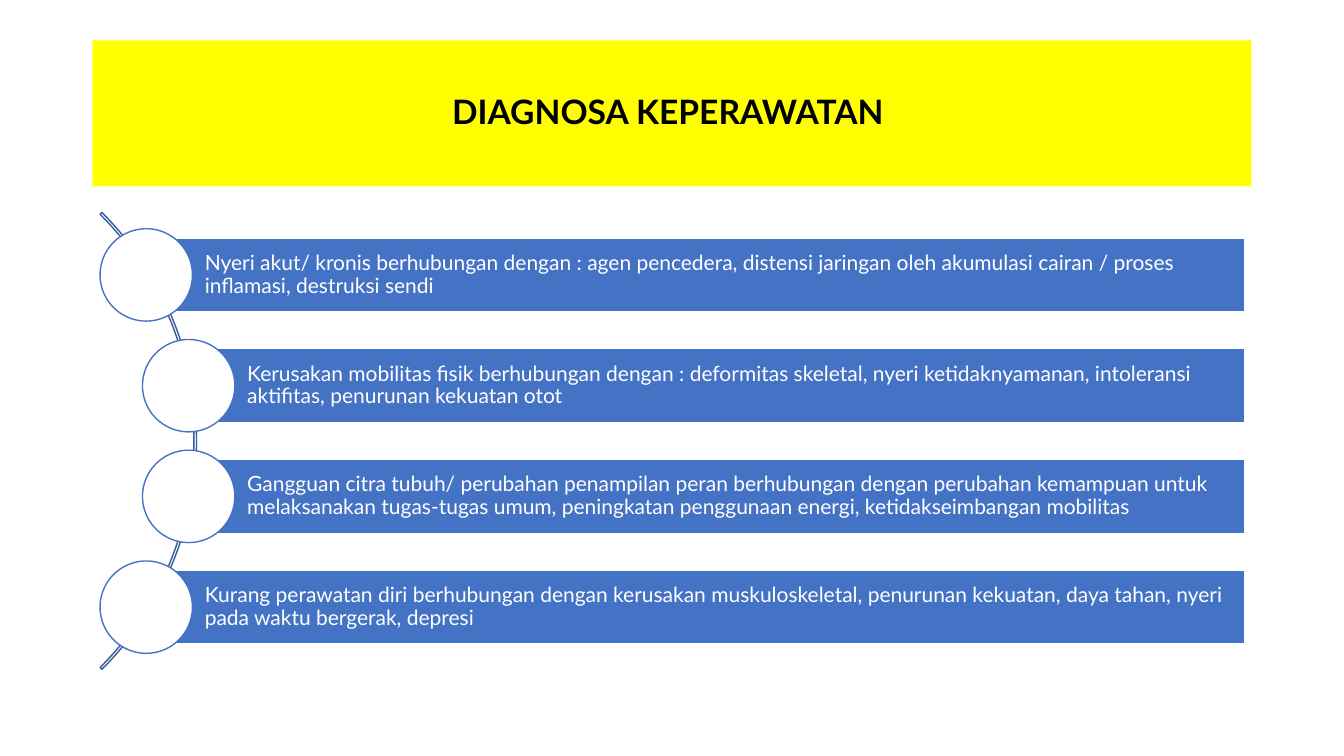
from pptx import Presentation
from pptx.util import Pt
from pptx.dml.color import RGBColor
from pptx.enum.shapes import MSO_SHAPE as SHAPE
from pptx.enum.text import MSO_ANCHOR as ANCHOR, PP_ALIGN as ALIGN

COLORS = {"yellow": "FFFF00", "blue": "4472C4", "arc": "365B9D",
          "white": "FFFFFF", "black": "000000"}

prs = Presentation()
prs.slide_width, prs.slide_height = Pt(960), Pt(540)
s = prs.slides.add_slide(prs.slide_layouts[6])


def add_shape(kind, x, y, w, h, fill=None, line=None):
    sp = s.shapes.add_shape(kind, Pt(x), Pt(y), Pt(w), Pt(h))
    sp.shadow.inherit = False
    for part, color in ((sp.fill, fill), (sp.line.fill, line)):
        if color:
            part.solid()
            part.fore_color.rgb = RGBColor.from_string(COLORS[color])
        else:
            part.background()
    if line:
        sp.line.width = Pt(1)
    return sp


def add_text(sp, text, size, color, align, bold=False):
    tf = sp.text_frame
    tf.word_wrap = True
    tf.vertical_anchor = ANCHOR.MIDDLE
    p = tf.paragraphs[0]
    p.alignment = align
    p.line_spacing = 0.9
    r = p.add_run()
    r.text = text
    r.font.name = "Lato"
    r.font.size = Pt(size)
    r.font.bold = bold
    r.font.color.rgb = RGBColor.from_string(COLORS[color])
    return tf


title = add_shape(SHAPE.RECTANGLE, 66, 28.8, 828, 104.4, "yellow")
add_text(title, "DIAGNOSA KEPERAWATAN ", 24, "black", ALIGN.CENTER, True)

arc = add_shape(SHAPE.BLOCK_ARC, -321.1, 84.2, 461.5, 461.5, line="arc")
for i, value in enumerate((189, 27, 0.004)):
    arc.adjustments[i] = value

diagnoses = [
    (0, "Nyeri akut/ kronis berhubungan dengan : agen pencedera, distensi jaringan oleh akumulasi cairan / proses inflamasi, destruksi sendi"),
    (30.3, "Kerusakan mobilitas fisik berhubungan dengan : deformitas skeletal, nyeri ketidaknyamanan, intoleransi aktifitas, penurunan kekuatan otot"),
    (30.3, "Gangguan citra tubuh/ perubahan penampilan peran berhubungan dengan perubahan kemampuan untuk melaksanakan tugas-tugas umum, peningkatan penggunaan energi, ketidakseimbangan mobilitas"),
    (0, "Kurang perawatan diri berhubungan dengan kerusakan muskuloskeletal, penurunan kekuatan, daya tahan, nyeri pada waktu bergerak, depresi"),
]
BAR_RIGHT, BAR_H, CIRCLE = 889.2, 52.7, 66

for i, (indent, text) in enumerate(diagnoses):
    cx = 104.5 + indent
    cy = 196.4 + 79.1 * i
    bar = add_shape(SHAPE.RECTANGLE, cx, cy - BAR_H / 2, BAR_RIGHT - cx, BAR_H, "blue", "white")
    tf = add_text(bar, text, 15, "white", ALIGN.LEFT)
    tf.margin_left = Pt(41.8)
    tf.margin_top = tf.margin_right = tf.margin_bottom = Pt(3)
    add_shape(SHAPE.OVAL, cx - CIRCLE / 2, cy - CIRCLE / 2, CIRCLE, CIRCLE, "white", "blue")

prs.save("out.pptx")
